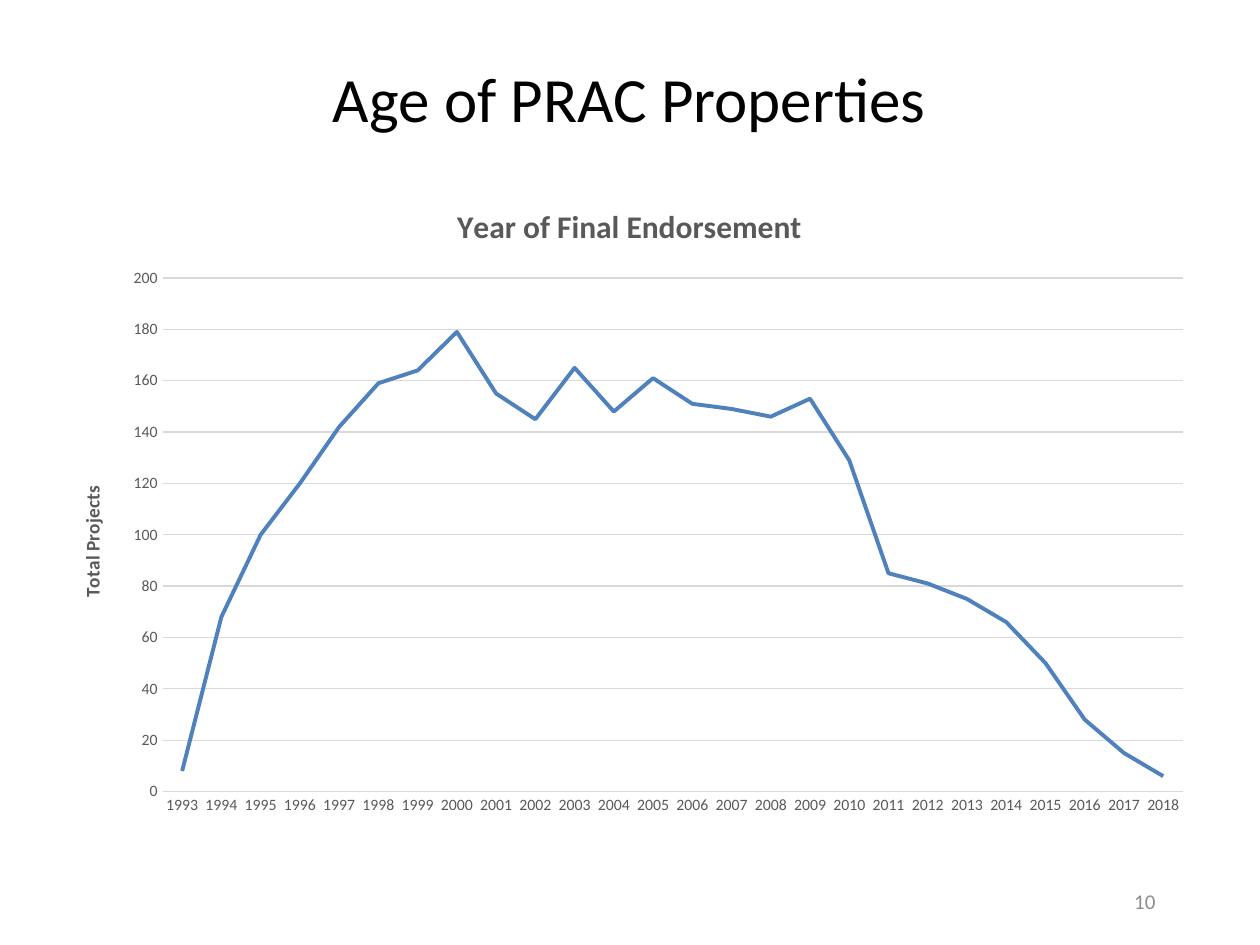
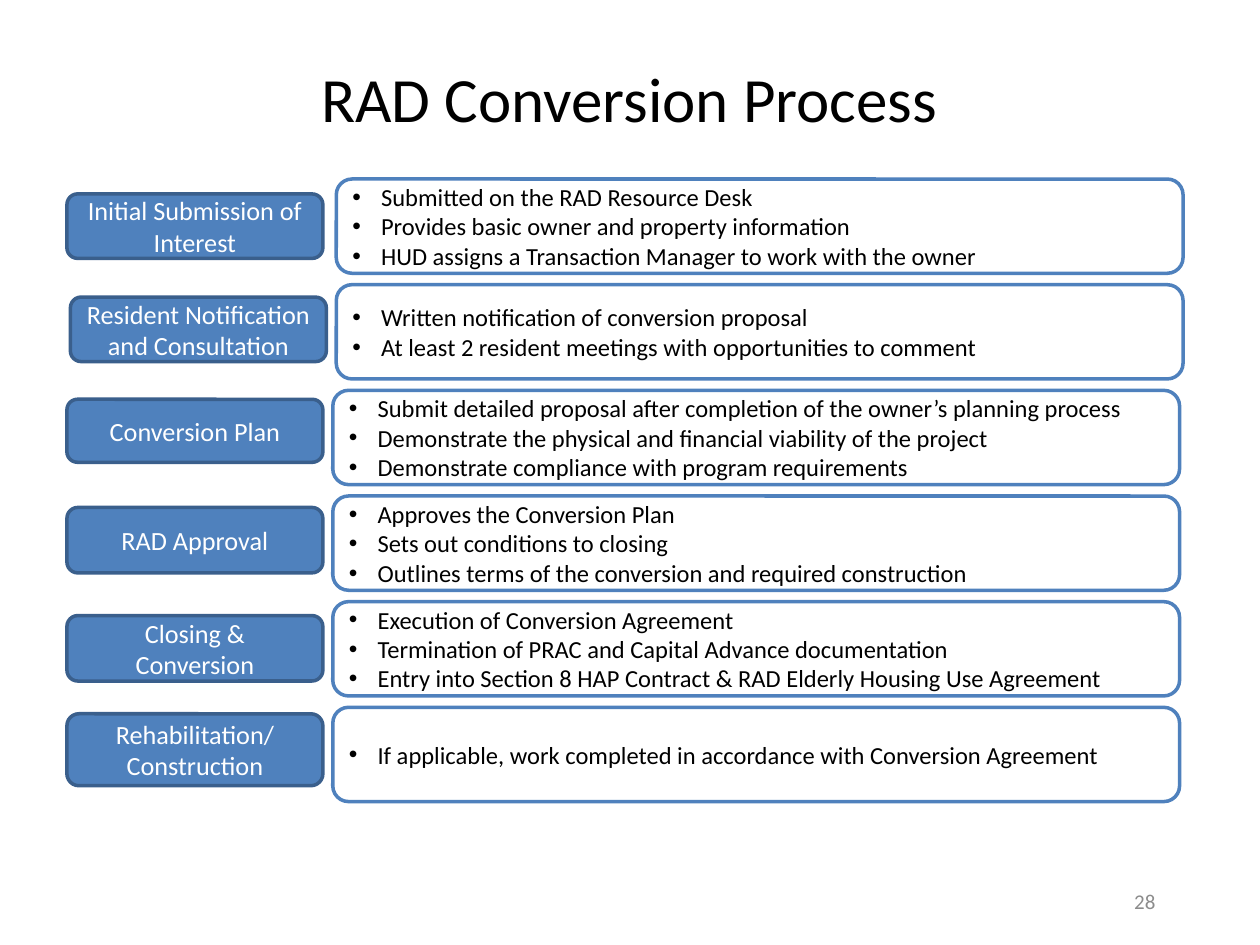
from pptx import Presentation
from pptx.chart.data import CategoryChartData
from pptx.dml.color import RGBColor
from pptx.enum.chart import XL_CHART_TYPE as CHART, XL_TICK_MARK as TICK
from pptx.enum.shapes import MSO_SHAPE as SHAPE
from pptx.enum.text import MSO_ANCHOR as ANCHOR, MSO_AUTO_SIZE as FIT, PP_ALIGN as ALIGN
from pptx.oxml.ns import qn
from pptx.util import Cm, Pt
from lxml import etree

FONT = "Calibri"
COLORS = {
    "ink": "000000", "paper": "FFFFFF", "blue": "4F81BD", "edge": "3A5F8C",
    "grey": "595959", "grid": "D9D9D9", "number": "8C8C8C",
}
TITLE_BOX = (1.47, 1.22, 22.43, 1.47)
NUMBER_BOX = (22.56, 17.65, 1.04, 1.02)
CHART_BOX = (1.07, 3.61, 23.24, 13.08)
STEPS_BOX = (1.35, 3.61, 22.43, 12.55)
BULLET_INDENT = 0.58

YEARS = range(1993, 2019)
PROJECTS = [8, 68, 100, 120, 142, 159, 164, 179, 155, 145, 165, 148, 161,
            151, 149, 146, 153, 129, 85, 81, 75, 66, 50, 28, 15, 6]

# label, label indent, label drop within its row, label height, detail indent, details
STEPS = [
    ("Initial Submission of Interest", 0, 0.3, 1.3, 5.43,
     ["Submitted on the RAD Resource Desk",
      "Provides basic owner and property information",
      "HUD assigns a Transaction Manager to work with the owner"]),
    ("Resident Notification and Consultation", 0.07, 0.25, 1.3, 5.43,
     ["Written notification of conversion proposal",
      "At least 2 resident meetings with opportunities to comment"]),
    ("Conversion Plan", 0, 0.18, 1.27, 5.36,
     ["Submit detailed proposal after completion of the owner’s planning process",
      "Demonstrate the physical and financial viability of the project",
      "Demonstrate compliance with program requirements"]),
    ("RAD Approval", 0, 0.23, 1.32, 5.36,
     ["Approves the Conversion Plan",
      "Sets out conditions to closing",
      "Outlines terms of the conversion and required construction"]),
    ("Closing &\vConversion", 0, 0.28, 1.32, 5.36,
     ["Execution of Conversion Agreement",
      "Termination of PRAC and Capital Advance documentation",
      "Entry into Section 8 HAP Contract & RAD Elderly Housing Use Agreement"]),
    ("Rehabilitation/ Construction", 0, 0.13, 1.45, 5.36,
     ["If applicable, work completed in accordance with Conversion Agreement"]),
]


def rgb(name):
    return RGBColor.from_string(COLORS[name])


def cm_box(box):
    return [Cm(v) for v in box]


def style_font(font, size, color, bold=False):
    font.name, font.size, font.bold = FONT, Pt(size), bold
    font.color.rgb = rgb(color)


def add_bullet(p):
    pPr = p._p.get_or_add_pPr()
    pPr.set("marL", str(Cm(BULLET_INDENT)))
    pPr.set("indent", str(-Cm(BULLET_INDENT)))
    etree.SubElement(pPr, qn("a:buFont")).set("typeface", "Arial")
    etree.SubElement(pPr, qn("a:buChar")).set("char", "•")


def write(tf, lines, size, color, align=ALIGN.CENTER, bullets=False, inset=0.25):
    """Fill a text frame with one paragraph per line."""
    tf.word_wrap, tf.auto_size = True, FIT.NONE
    tf.vertical_anchor = ANCHOR.MIDDLE
    tf.margin_left = tf.margin_right = Cm(inset)
    tf.margin_top = tf.margin_bottom = Cm(0.13)
    tf.text = "\n".join(lines)
    for p in tf.paragraphs:
        p.alignment = align
        if bullets:
            add_bullet(p)
        for r in p.runs:
            style_font(r.font, size, color)


def add_titled_slide(prs, title, number):
    s = prs.slides.add_slide(prs.slide_layouts[5])
    sp = s.shapes.title
    sp.left, sp.top, sp.width, sp.height = cm_box(TITLE_BOX)
    write(sp.text_frame, [title], 36, "ink")
    sp = s.shapes.add_textbox(*cm_box(NUMBER_BOX))
    write(sp.text_frame, [str(number)], 12, "number")
    return s


def add_round_box(s, box, fill, line, lines, **fmt):
    sp = s.shapes.add_shape(SHAPE.ROUNDED_RECTANGLE, *cm_box(box))
    sp.shadow.inherit = False
    sp.fill.solid()
    sp.fill.fore_color.rgb = rgb(fill)
    sp.line.color.rgb = rgb(line)
    sp.line.width = Pt(2)
    write(sp.text_frame, lines, inset=0.23, **fmt)


def set_heading(owner, text, size):
    """Title a chart or an axis."""
    owner.has_title = True
    title = owner.chart_title if hasattr(owner, "chart_title") else owner.axis_title
    title.text_frame.text = text
    style_font(title.text_frame.paragraphs[0].runs[0].font, size, "grey", bold=True)


def style_line(line, color, width):
    line.color.rgb = rgb(color)
    line.width = Pt(width)


def add_endorsement_chart(s, box):
    data = CategoryChartData()
    data.categories = [str(year) for year in YEARS]
    data.add_series("Series 1", PROJECTS)
    chart = s.shapes.add_chart(CHART.LINE, *cm_box(box), data).chart
    style_font(chart.font, 10, "ink")
    chart.has_legend = False
    set_heading(chart, "Year of Final Endorsement", 18)
    chart.chart_title.include_in_layout = False

    for axis in (chart.category_axis, chart.value_axis):
        axis.major_tick_mark = axis.minor_tick_mark = TICK.NONE
        style_font(axis.tick_labels.font, 9, "grey")
    style_line(chart.category_axis.format.line, "grid", 0.75)

    values = chart.value_axis
    values.minimum_scale, values.maximum_scale, values.major_unit = 0, 200, 20
    values.format.line.fill.background()
    values.has_major_gridlines = True
    style_line(values.major_gridlines.format.line, "grid", 0.75)
    set_heading(values, "Total Projects", 11)

    plot = chart.plots[0]
    plot.vary_by_categories = False
    plot.series[0].smooth = False
    style_line(plot.series[0].format.line, "blue", 2.25)


def add_steps(s, box):
    """Stack one row per step: a label on the left, its details on the right."""
    left, top, width, height = box
    detail_h, detail_w = 1.9, 17.07
    pitch = (height - detail_h) / (len(STEPS) - 1)
    for i, (label, label_x, drop, label_h, detail_x, details) in enumerate(STEPS):
        y = top + i * pitch
        add_round_box(s, (left + label_x, y + drop, 5.16, label_h), "blue", "edge",
                      [label], size=15, color="paper")
        add_round_box(s, (left + detail_x, y, detail_w, detail_h), "paper", "blue",
                      details, size=14, color="ink", align=ALIGN.LEFT, bullets=True)


def main():
    prs = Presentation()
    prs.slide_width, prs.slide_height = Cm(25.4), Cm(19.05)
    add_endorsement_chart(add_titled_slide(prs, "Age of PRAC Properties", 10), CHART_BOX)
    add_steps(add_titled_slide(prs, "RAD Conversion Process", 28), STEPS_BOX)
    prs.save("out.pptx")


if __name__ == "__main__":
    main()
